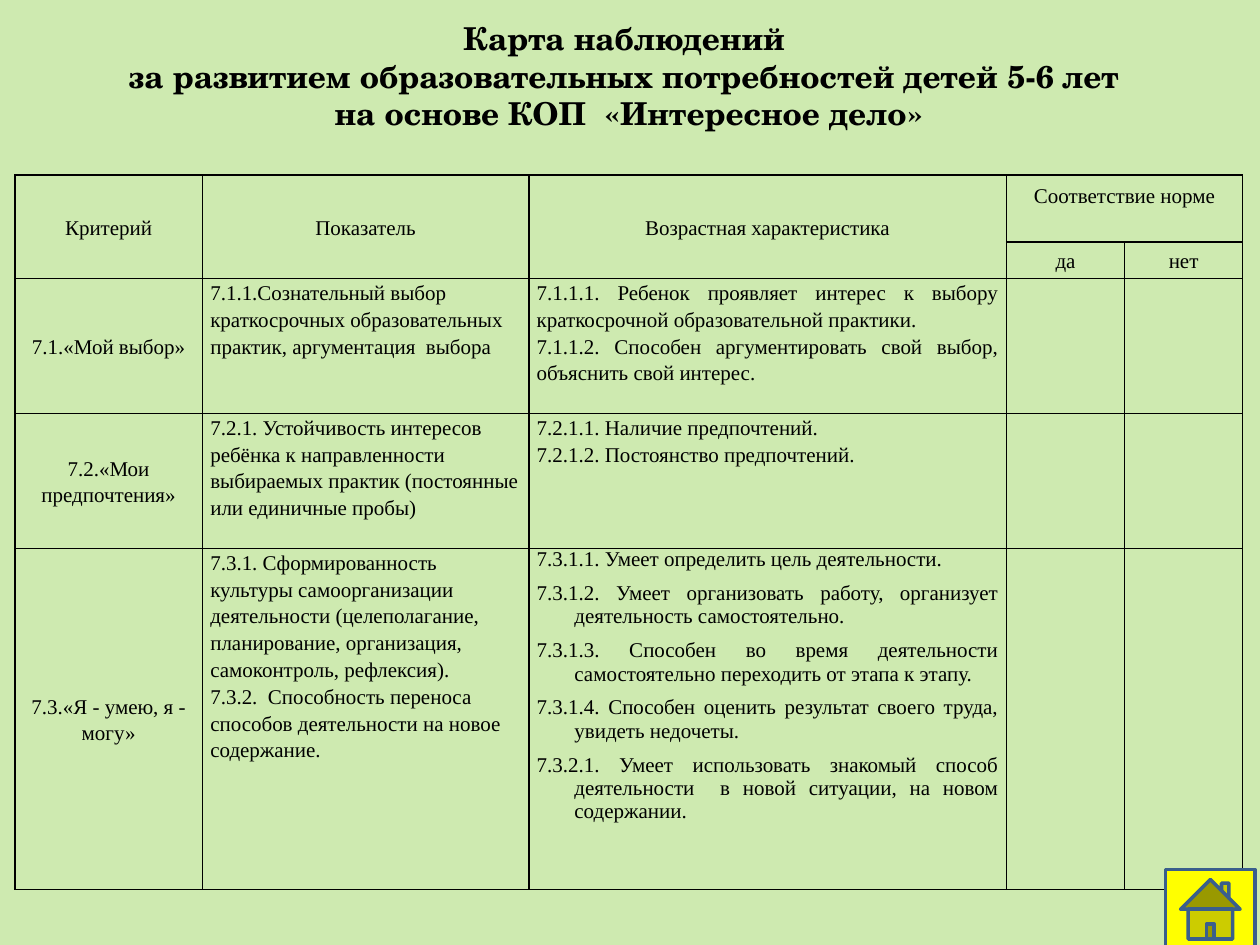
from lxml.etree import SubElement
from pptx import Presentation
from pptx.dml.color import RGBColor
from pptx.enum.shapes import MSO_SHAPE
from pptx.enum.text import MSO_ANCHOR, MSO_AUTO_SIZE, PP_ALIGN
from pptx.oxml.ns import qn
from pptx.util import Cm, Pt

BACKGROUND = RGBColor(0xCE, 0xEA, 0xB0)
BLACK = RGBColor(0, 0, 0)
YELLOW = RGBColor(0xFF, 0xFF, 0)
BLUE = RGBColor(0x3A, 0x5F, 0x8C)

TITLE = [
    "Карта наблюдений ",
    "за развитием образовательных потребностей детей 5-6 лет ",
    "на основе КОП  «Интересное дело»",
]
COLUMNS = [3.78, 6.58, 9.63, 2.38, 2.38]
ROWS = [1.35, 0.73, 2.72, 2.72, 6.88]
THIN_ROW_EDGES = {3, 4}
THIN_COLUMN_EDGES = {4}
HEADERS = [
    ["Критерий", "Показатель", "Возрастная характеристика"],
    ["да", "нет"],
]
CRITERIA = [
    (
        ["7.1.«Мой выбор»"],
        ["7.1.1.Сознательный выбор краткосрочных образовательных практик, аргументация  выбора"],
        [
            "7.1.1.1. Ребенок проявляет интерес к выбору краткосрочной образовательной практики.",
            "7.1.1.2. Способен аргументировать свой выбор, объяснить свой интерес.",
        ],
    ),
    (
        ["7.2.«Мои предпочтения»"],
        ["7.2.1. Устойчивость интересов ребёнка к направленности выбираемых практик "
         "(постоянные или единичные пробы)"],
        ["7.2.1.1. Наличие предпочтений.", "7.2.1.2. Постоянство предпочтений."],
    ),
    (
        ["7.3.«Я - умею, я - могу»"],
        [
            "7.3.1. Сформированность культуры самоорганизации деятельности (целеполагание, "
            "планирование, организация, самоконтроль, рефлексия).",
            "7.3.2.  Способность переноса способов деятельности на новое содержание.",
        ],
        [
            "7.3.1.1. Умеет определить цель деятельности.",
            "7.3.1.2. Умеет организовать работу, организует деятельность самостоятельно.",
            "7.3.1.3. Способен во время деятельности самостоятельно переходить от этапа к этапу.",
            "7.3.1.4. Способен оценить результат своего труда, увидеть недочеты.",
            "7.3.2.1. Умеет использовать знакомый способ деятельности  в новой ситуации, "
            "на новом содержании.",
        ],
    ),
]


def write_text(tf, lines, font="Times New Roman", size=12, bold=False,
               align=PP_ALIGN.CENTER, spacing=1.15, before=0, hanging=0):
    for i, line in enumerate(lines):
        p = tf.add_paragraph() if i else tf.paragraphs[0]
        p.alignment = align
        p.line_spacing = spacing
        p.space_before = Pt(before)
        if hanging:
            pPr = p._p.get_or_add_pPr()
            pPr.set("marL", str(Cm(hanging)))
            pPr.set("indent", str(-Cm(hanging)))
        r = p.add_run()
        r.text = line
        r.font.name = font
        r.font.size = Pt(size)
        r.font.bold = bold
        r.font.color.rgb = BLACK


def add_title(s):
    sp = s.shapes.title
    sp.left, sp.top, sp.width, sp.height = Cm(0), Cm(0.25), Cm(25.35), Cm(2.57)
    tf = sp.text_frame
    tf.word_wrap = True
    tf.auto_size = MSO_AUTO_SIZE.NONE
    tf.vertical_anchor = MSO_ANCHOR.TOP
    write_text(tf, TITLE, font="TeX Gyre Schola", size=18, bold=True, spacing=1.0)


def format_cell(cell, row, col):
    tcPr = cell._tc.get_or_add_tcPr()
    thin = {
        "a:lnL": col in THIN_COLUMN_EDGES,
        "a:lnR": col + 1 in THIN_COLUMN_EDGES,
        "a:lnT": row in THIN_ROW_EDGES,
        "a:lnB": row + 1 in THIN_ROW_EDGES,
    }
    for side, is_thin in thin.items():
        ln = SubElement(tcPr, qn(side), w=str(Pt(0.5 if is_thin else 1)))
        fill = SubElement(ln, qn("a:solidFill"))
        SubElement(fill, qn("a:srgbClr"), val=str(BLACK))
    cell.fill.background()
    cell.margin_left = cell.margin_right = Cm(0.16)
    cell.margin_top = cell.margin_bottom = Cm(0)
    cell.vertical_anchor = MSO_ANCHOR.TOP if row > 1 and col else MSO_ANCHOR.MIDDLE


def add_grid(s):
    frame = s.shapes.add_table(len(ROWS), len(COLUMNS), Cm(0.3), Cm(3.53),
                               Cm(sum(COLUMNS)), Cm(sum(ROWS)))
    table = frame.table
    table.first_row = table.horz_banding = False
    for column, width in zip(table.columns, COLUMNS):
        column.width = Cm(width)
    for row, height in zip(table.rows, ROWS):
        row.height = Cm(height)
    for i in range(len(ROWS)):
        for j in range(len(COLUMNS)):
            format_cell(table.cell(i, j), i, j)
    return table


def fill_headers(table):
    for j, text in enumerate(HEADERS[0]):
        table.cell(0, j).merge(table.cell(1, j))
        write_text(table.cell(0, j).text_frame, [text])
    norm = table.cell(0, 3)
    norm.merge(table.cell(0, 4))
    norm.vertical_anchor = MSO_ANCHOR.TOP
    norm.margin_top = Cm(0.13)
    write_text(norm.text_frame, ["Соответствие норме"])
    for j, text in enumerate(HEADERS[1], start=3):
        write_text(table.cell(1, j).text_frame, [text])


def fill_criteria(table):
    for i, (criterion, indicators, traits) in enumerate(CRITERIA, start=2):
        write_text(table.cell(i, 0).text_frame, criterion)
        write_text(table.cell(i, 1).text_frame, indicators, align=PP_ALIGN.LEFT)
        layout = {"spacing": 1.0, "before": 6, "hanging": 0.76} if len(traits) > 2 else {}
        write_text(table.cell(i, 2).text_frame, traits, align=PP_ALIGN.JUSTIFY, **layout)


def add_home_button(s):
    sp = s.shapes.add_shape(MSO_SHAPE.ACTION_BUTTON_HOME, Cm(23.5), Cm(17.53), Cm(1.8), Cm(1.6))
    sp.shadow.inherit = False
    sp.fill.solid()
    sp.fill.fore_color.rgb = YELLOW
    sp.line.color.rgb = BLUE
    sp.line.width = Pt(2)


def main():
    prs = Presentation()
    prs.slide_width, prs.slide_height = Cm(25.4), Cm(19.05)
    s = prs.slides.add_slide(prs.slide_layouts[5])
    s.background.fill.solid()
    s.background.fill.fore_color.rgb = BACKGROUND
    add_title(s)
    table = add_grid(s)
    fill_headers(table)
    fill_criteria(table)
    add_home_button(s)
    prs.save("out.pptx")


if __name__ == "__main__":
    main()
